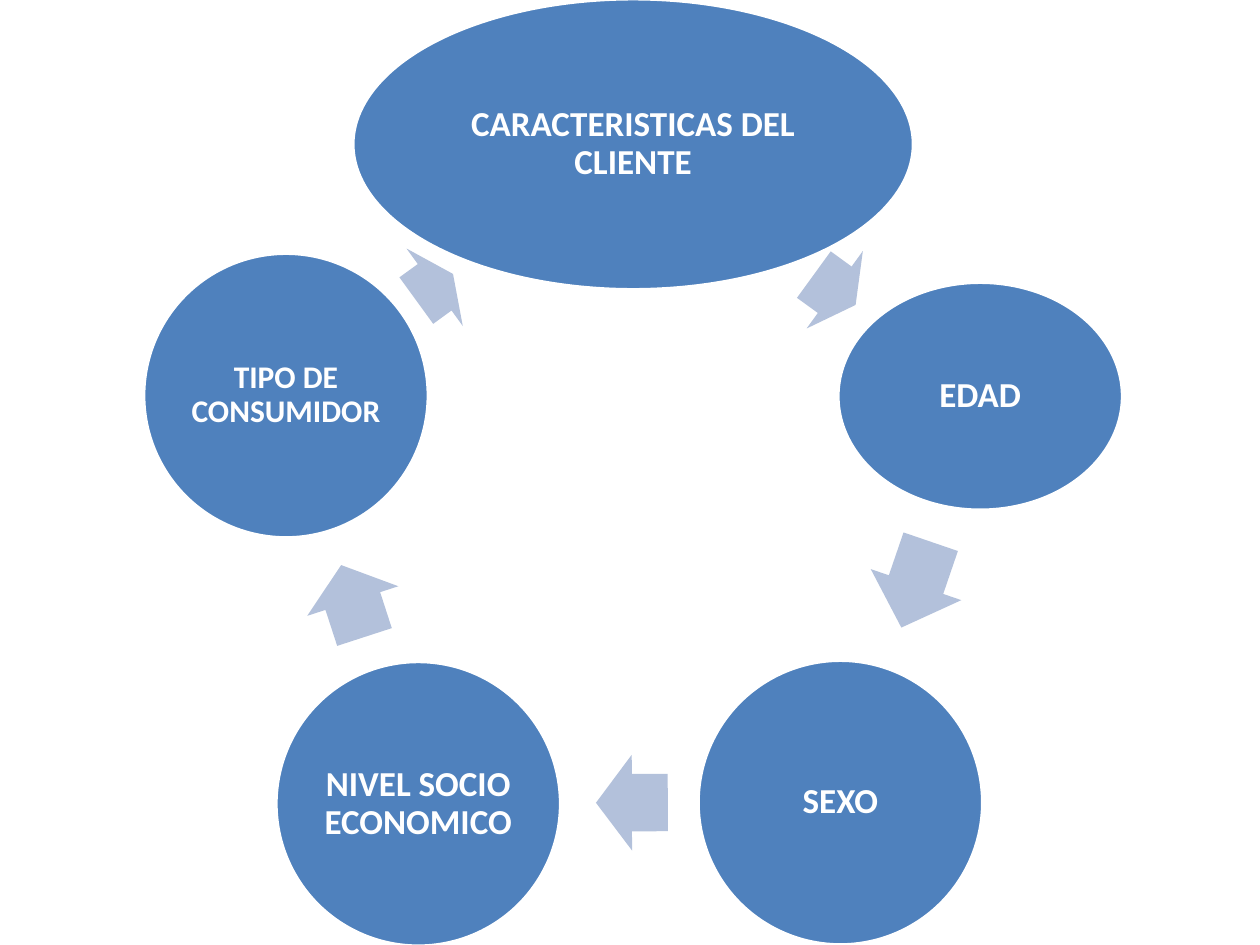
from dataclasses import dataclass

from pptx import Presentation
from pptx.dml.color import RGBColor
from pptx.enum.shapes import MSO_SHAPE as SHAPE
from pptx.enum.text import MSO_ANCHOR as ANCHOR, PP_ALIGN as ALIGN
from pptx.util import Inches, Pt

BLUE = RGBColor(0x4F, 0x81, 0xBD)
PALE_BLUE = RGBColor(0xB3, 0xC1, 0xDB)
WHITE = RGBColor(0xFF, 0xFF, 0xFF)
CIRCLE = 2.26
ARROW_HEIGHT = 0.76
INSET = Inches(0.03)


@dataclass
class Node:
    text: str
    left: float
    top: float
    width: float = CIRCLE
    height: float = CIRCLE
    size: int = 20


@dataclass
class Arrow:
    left: float
    top: float
    width: float
    rotation: float


# The cycle, clockwise: each node with the arrow that leaves it
CYCLE = [
    (Node("CARACTERISTICAS DEL CLIENTE", 2.8, -0.01, 4.45, 2.31), Arrow(6.42, 1.92, 0.41, 36)),
    (Node("EDAD", 6.65, 2.24, height=1.81), Arrow(6.91, 4.26, 0.72, 108.9)),
    (Node("SEXO", 5.54, 5.24), Arrow(4.73, 5.99, 0.57, 179.8)),
    (Node("NIVEL SOCIO ECONOMICO", 2.19, 5.25), Arrow(2.5, 4.39, 0.6, 252)),
    (Node("TIPO DE CONSUMIDOR", 1.14, 2.01, size=18), Arrow(3.27, 1.9, 0.36, 324)),
]


def add_filled(slide, kind, left: float, top: float, width: float, height: float,
               color: RGBColor):
    sp = slide.shapes.add_shape(kind, Inches(left), Inches(top), Inches(width), Inches(height))
    sp.shadow.inherit = False
    sp.fill.solid()
    sp.fill.fore_color.rgb = color
    return sp


def write_text(sp, text: str, *, size: int, color: RGBColor = WHITE,
               font: str = "Calibri", bold: bool = True) -> None:
    tf = sp.text_frame
    tf.word_wrap = True
    tf.vertical_anchor = ANCHOR.MIDDLE
    tf.margin_left = tf.margin_top = tf.margin_right = tf.margin_bottom = INSET
    p = tf.paragraphs[0]
    p.alignment = ALIGN.CENTER
    p.line_spacing = 0.9
    r = p.add_run()
    r.text = text
    r.font.name = font
    r.font.size = Pt(size)
    r.font.bold = bold
    r.font.color.rgb = color


def draw_node(slide, node: Node) -> None:
    sp = add_filled(slide, SHAPE.OVAL, node.left, node.top, node.width, node.height, BLUE)
    sp.line.color.rgb = WHITE
    sp.line.width = Pt(2)
    write_text(sp, node.text, size=node.size)


def draw_arrow(slide, arrow: Arrow) -> None:
    sp = add_filled(slide, SHAPE.RIGHT_ARROW, arrow.left, arrow.top, arrow.width,
                    ARROW_HEIGHT, PALE_BLUE)
    sp.line.fill.background()
    sp.adjustments[0] = 0.6
    sp.adjustments[1] = 0.5
    sp.rotation = arrow.rotation


def main() -> None:
    prs = Presentation()
    prs.slide_width, prs.slide_height = Inches(10), Inches(7.5)
    slide = prs.slides.add_slide(prs.slide_layouts[6])
    for node, arrow in CYCLE:
        draw_node(slide, node)
        draw_arrow(slide, arrow)
    prs.save("out.pptx")


if __name__ == "__main__":
    main()
